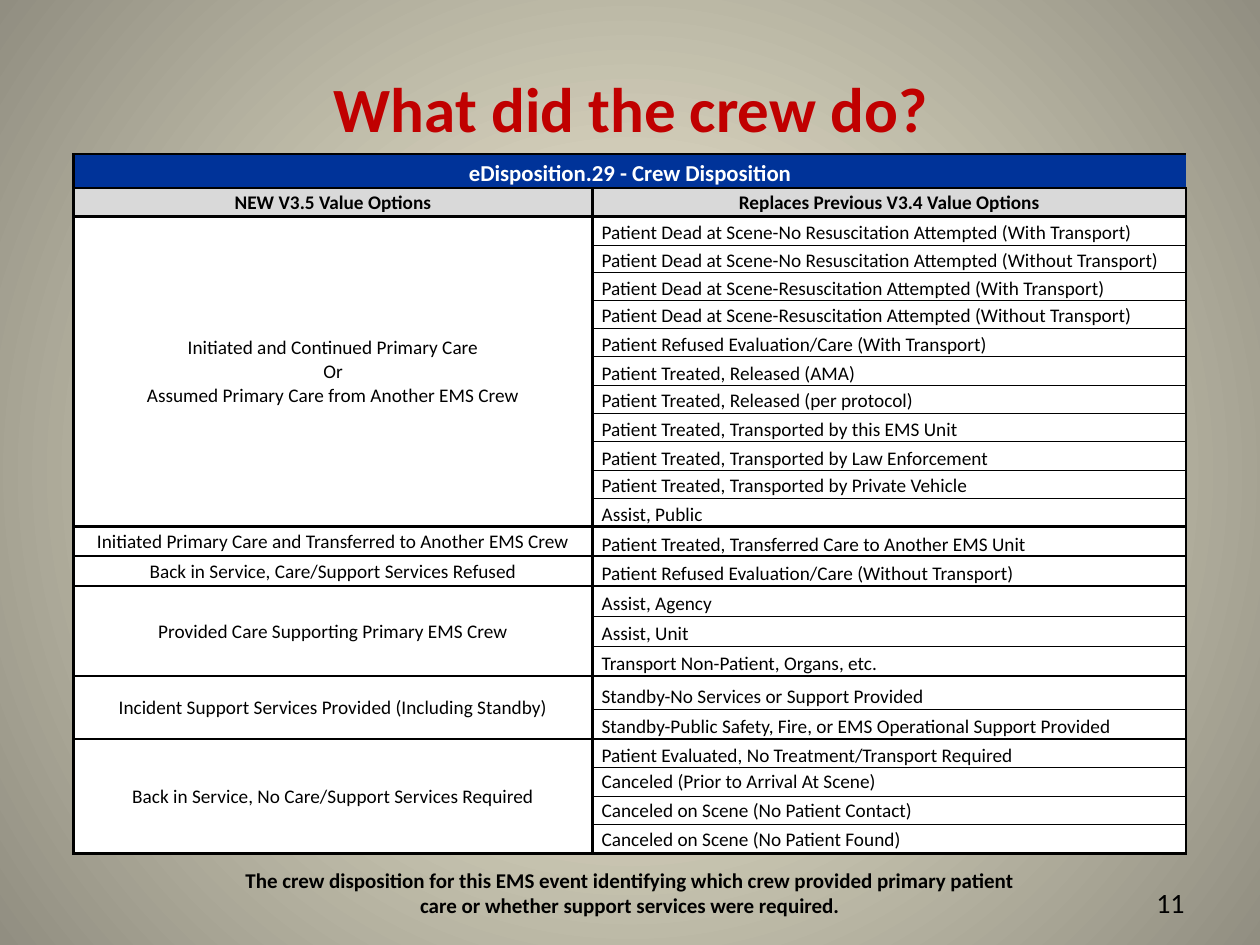
from pptx import Presentation
from pptx.dml.color import RGBColor
from pptx.enum.text import MSO_ANCHOR as Anchor, MSO_AUTO_SIZE as AutoSize, PP_ALIGN as Align
from pptx.oxml.ns import qn
from pptx.util import Pt
from lxml.etree import SubElement

FONT = "Calibri"
BLACK, WHITE, RED = "000000", "FFFFFF", "C00000"
BLUE, GREY = "003399", "D9D9D9"
THICK, THIN = 1.5, 0.5
NO_STYLE = "{2D5ABB26-0587-4C30-8999-92F81FD0307C}"

# New value (one entry per line) and the old values that it replaces
GROUPS = [
    (["Initiated and Continued Primary Care", "Or",
      "Assumed Primary Care from Another EMS Crew"],
     ["Patient Dead at Scene-No Resuscitation Attempted (With Transport)",
      "Patient Dead at Scene-No Resuscitation Attempted (Without Transport)",
      "Patient Dead at Scene-Resuscitation Attempted (With Transport)",
      "Patient Dead at Scene-Resuscitation Attempted (Without Transport)",
      "Patient Refused Evaluation/Care (With Transport)",
      "Patient Treated, Released (AMA)",
      "Patient Treated, Released (per protocol)",
      "Patient Treated, Transported by this EMS Unit",
      "Patient Treated, Transported by Law Enforcement",
      "Patient Treated, Transported by Private Vehicle",
      "Assist, Public"]),
    (["Initiated Primary Care and Transferred to Another EMS Crew"],
     ["Patient Treated, Transferred Care to Another EMS Unit"]),
    (["Back in Service, Care/Support Services Refused"],
     ["Patient Refused Evaluation/Care (Without Transport)"]),
    (["Provided Care Supporting Primary EMS Crew"],
     ["Assist, Agency", "Assist, Unit", "Transport Non-Patient, Organs, etc."]),
    (["Incident Support Services Provided (Including Standby)"],
     ["Standby-No Services or Support Provided",
      "Standby-Public Safety, Fire, or EMS Operational Support Provided"]),
    (["Back in Service, No Care/Support Services Required"],
     ["Patient Evaluated, No Treatment/Transport Required",
      "Canceled (Prior to Arrival At Scene)",
      "Canceled on Scene (No Patient Contact)",
      "Canceled on Scene (No Patient Found)"]),
]
COLUMN_WIDTHS = [296.6, 339.2]
ROW_HEIGHTS = ([19.4, 16.4, 16.4] + [15.8] * 3 + [16.4] * 2 + [15.8] + [16.4] * 2
               + [15.8, 16.2] + [17.1] * 5 + [18.9, 17] + [16.4] * 4)


def color(hex_code):
    return RGBColor.from_string(hex_code)


def write(frame, lines, size, ink=BLACK, bold=False, align=Align.CENTER):
    """Fill the first paragraph, with a line break between the lines."""
    para = frame.paragraphs[0]
    para.alignment = align
    for index, line in enumerate(lines):
        if index:
            para.add_line_break()
        span = para.add_run()
        span.text = line
        span.font.name, span.font.size, span.font.bold = FONT, Pt(size), bold
        span.font.color.rgb = color(ink)
    return para


def add_background(slide):
    fill = slide.background.fill
    fill.gradient()
    for stop, place, shade in zip(fill.gradient_stops, (0, 1), ("FCF7DD", "918E81")):
        stop.position = place
        stop.color.rgb = color(shade)
    # Turn the linear gradient into a circular one
    linear = slide.element.find(".//" + qn("a:lin"))
    gradient = linear.getparent()
    gradient.remove(linear)
    circle = SubElement(gradient, qn("a:path"), path="circle")
    SubElement(circle, qn("a:fillToRect"), l="50000", t="50000", r="50000", b="50000")


def add_title(slide, text):
    title = slide.shapes.title
    title.left, title.top, title.width, title.height = Pt(24), Pt(36), Pt(673), Pt(51)
    frame = title.text_frame
    frame.auto_size = AutoSize.NONE
    frame.vertical_anchor = Anchor.TOP
    write(frame, [text], 36, RED, bold=True).space_after = Pt(4.5)


def add_text(slide, text, place, size, bold=False, align=Align.CENTER, anchor=Anchor.TOP):
    box = slide.shapes.add_textbox(*[Pt(length) for length in place])
    frame = box.text_frame
    frame.word_wrap = True
    frame.vertical_anchor = anchor
    write(frame, [text], size, bold=bold, align=align)


def set_borders(cell, left=THICK, right=THICK, top=THICK, bottom=THICK):
    properties = cell._tc.get_or_add_tcPr()
    sides = zip(("a:lnL", "a:lnR", "a:lnT", "a:lnB"), (left, right, top, bottom))
    for index, (tag, width) in enumerate(sides):
        line = SubElement(properties, qn(tag), w=str(Pt(width)))
        properties.insert(index, line)  # lines come before the fill
        if width:
            solid = SubElement(line, qn("a:solidFill"))
            SubElement(solid, qn("a:srgbClr"), val=BLACK)
        else:
            SubElement(line, qn("a:noFill"))


def fill_cell(cell, lines, fill=WHITE, size=11, ink=BLACK, bold=False,
              align=Align.CENTER, anchor=Anchor.MIDDLE, indent=0.7, **borders):
    cell.fill.solid()
    cell.fill.fore_color.rgb = color(fill)
    cell.margin_left, cell.margin_bottom = Pt(indent), 0
    cell.margin_top = cell.margin_right = Pt(0.7)
    cell.vertical_anchor = anchor
    write(cell.text_frame, lines, size, ink, bold, align)
    set_borders(cell, **borders)


def add_table(slide):
    frame = slide.shapes.add_table(len(ROW_HEIGHTS), 2, Pt(42), Pt(88),
                                   Pt(sum(COLUMN_WIDTHS)), Pt(sum(ROW_HEIGHTS)))
    table = frame.table
    table.first_row = table.horz_banding = False
    frame.element.find(".//" + qn("a:tableStyleId")).text = NO_STYLE
    for column, width in zip(table.columns, COLUMN_WIDTHS):
        column.width = Pt(width)
    for row, height in zip(table.rows, ROW_HEIGHTS):
        row.height = Pt(height)

    # Banner and column heads
    table.cell(0, 0).merge(table.cell(0, 1))
    fill_cell(table.cell(0, 0), ["eDisposition.29 - Crew Disposition"], BLUE, 13, WHITE,
              bold=True, anchor=Anchor.BOTTOM, right=0)
    heads = ["NEW V3.5 Value Options", "Replaces Previous V3.4 Value Options"]
    for index, head in enumerate(heads):
        fill_cell(table.cell(1, index), [head], GREY, bold=True)

    # One merged cell on the left for each group of old values
    first = 2
    for new_value, old_values in GROUPS:
        last = first + len(old_values) - 1
        if last > first:
            table.cell(first, 0).merge(table.cell(last, 0))
        fill_cell(table.cell(first, 0), new_value)
        for row, old_value in enumerate(old_values, first):
            canceled = old_value.startswith("Canceled")
            fill_cell(table.cell(row, 1), [old_value], align=Align.LEFT, indent=5.2,
                      anchor=Anchor.MIDDLE if canceled else Anchor.BOTTOM,
                      top=THICK if row == first else THIN,
                      bottom=THICK if row == last else THIN)
        first = last + 1


def main():
    deck = Presentation()
    deck.slide_width, deck.slide_height = Pt(720), Pt(540)
    slide = deck.slides.add_slide(deck.slide_layouts[5])
    add_background(slide)
    add_title(slide, "What did the crew do?")
    add_table(slide)
    # Caption and page number
    add_text(slide, "The crew disposition for this EMS event identifying which crew provided "
             "primary patient care or whether support services were required.",
             (126, 492, 468, 36), 12, bold=True)
    add_text(slide, "11", (516, 502, 168, 27), 16, align=Align.RIGHT, anchor=Anchor.MIDDLE)
    deck.save("out.pptx")


if __name__ == "__main__":
    main()
